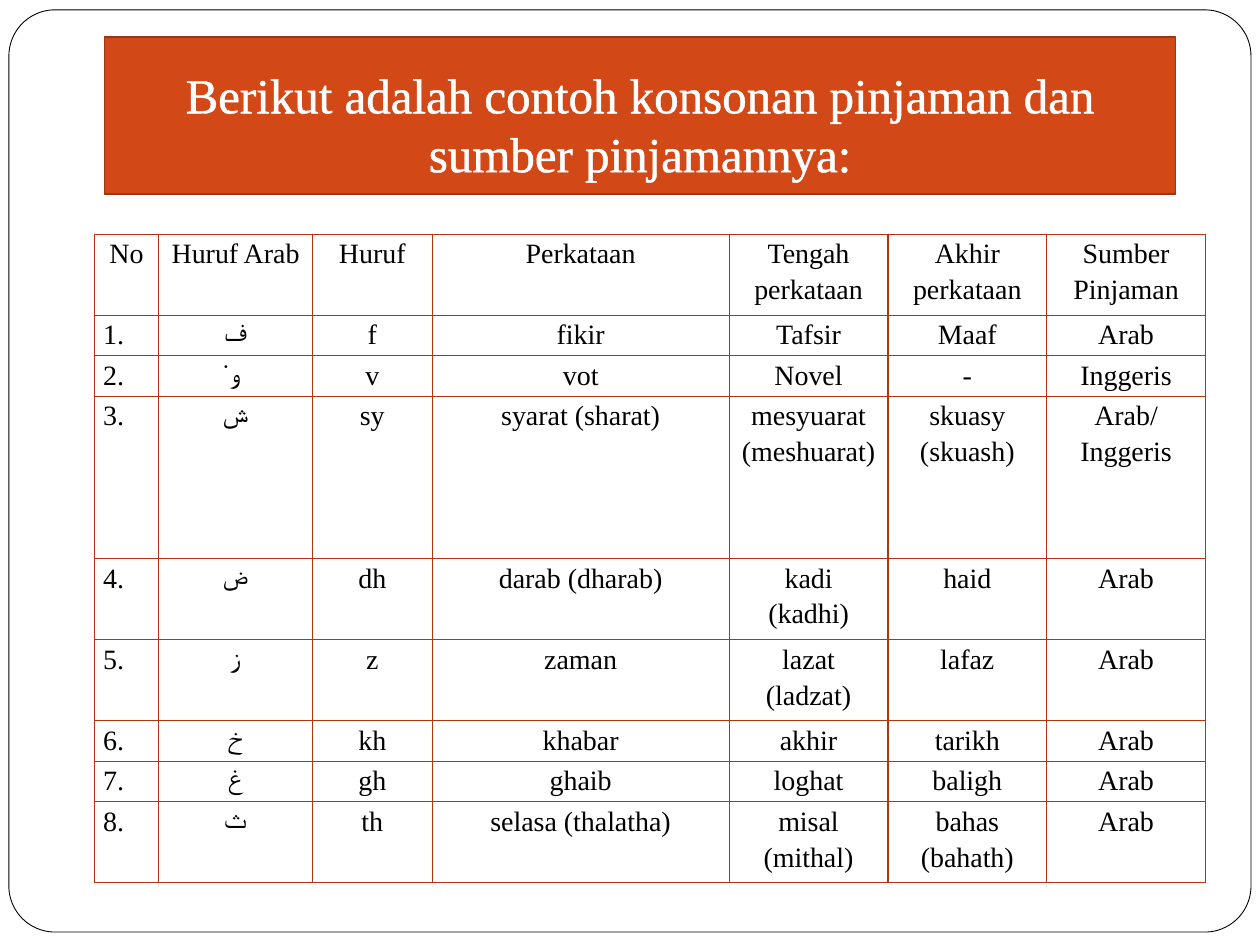
from lxml.etree import SubElement
from pptx import Presentation
from pptx.dml.color import RGBColor
from pptx.enum.shapes import MSO_SHAPE as Preset
from pptx.enum.text import MSO_ANCHOR as Anchor, PP_ALIGN as Align
from pptx.oxml.ns import qn
from pptx.util import Cm, Pt

FONT = "Times New Roman"
COLORS = {
    "paper": "FFFFFF",
    "ink": "000000",
    "banner": "D34817",
    "banner_edge": "9C3511",
    "grid": "B1360B",
}

TITLE = "Berikut adalah contoh konsonan pinjaman dan sumber pinjamannya:"
COLUMN_WIDTHS = [1.3, 3.1, 2.41, 5.99, 3.2, 3.2, 3.2]
ROW_LINES = [2, 1, 1, 4, 2, 2, 1, 1, 2]
TABLE_HEIGHT = 13.08
CONSONANTS = [
    ["No", "Huruf Arab", "Huruf", "Perkataan", "Tengah perkataan",
     "Akhir perkataan", "Sumber Pinjaman"],
    ["1.", "ف", "f", "fikir", "Tafsir", "Maaf", "Arab"],
    ["2.", "و̇", "v", "vot", "Novel", "-", "Inggeris"],
    ["3.", "ش", "sy", "syarat (sharat)", "mesyuarat (meshuarat)",
     "skuasy (skuash)", "Arab/ Inggeris"],
    ["4.", "ض", "dh", "darab (dharab)", "kadi\n(kadhi)", "haid", "Arab"],
    ["5.", "ز", "z", "zaman", "lazat (ladzat)", "lafaz", "Arab"],
    ["6.", "خ", "kh", "khabar", "akhir", "tarikh", "Arab"],
    ["7.", "غ", "gh", "ghaib", "loghat", "baligh", "Arab"],
    ["8.", "ث", "th", "selasa (thalatha)", "misal\n(mithal)",
     "bahas (bahath)", "Arab"],
]


def color(name):
    return RGBColor.from_string(COLORS[name])


def add_line(parent, tag, width, name):
    line = SubElement(parent, qn(tag), w=str(Pt(width)))
    fill = SubElement(line, qn("a:solidFill"))
    SubElement(fill, qn("a:srgbClr"), val=COLORS[name])
    return line


def add_span(para, text, size, name):
    span = para.add_run()
    span.text = text
    span.font.name = FONT
    span.font.size = Pt(size)
    span.font.color.rgb = color(name)
    return span


def add_box(page, preset, place, fill, edge, edge_width):
    box = page.shapes.add_shape(preset, *map(Cm, place))
    box.shadow.inherit = False
    box.fill.solid()
    box.fill.fore_color.rgb = color(fill)
    box.line.color.rgb = color(edge)
    box.line.width = Pt(edge_width)
    return box


def add_frame(page):
    frame = add_box(page, Preset.ROUNDED_RECTANGLE, (0.18, 0.2, 25.04, 18.59),
                    "paper", "ink", 0.5)
    frame.adjustments[0] = 0.05


def add_banner(page):
    banner = add_box(page, Preset.RECTANGLE, (2.11, 0.74, 21.59, 3.18),
                     "banner", "banner_edge", 1)
    text = banner.text_frame
    text.word_wrap = True
    text.vertical_anchor = Anchor.BOTTOM
    text.margin_left = text.margin_right = text.margin_bottom = Cm(0.25)
    text.margin_top = Cm(0.13)
    para = text.paragraphs[0]
    para.alignment = Align.CENTER
    span = add_span(para, TITLE, 28, "paper")
    properties = span.font._element
    properties.insert(0, add_line(properties, "a:ln", 1.45, "paper"))


def fill_cell(cell, text, alignment):
    cell.margin_left = cell.margin_right = Cm(0.18)
    cell.margin_top = cell.margin_bottom = 0
    frame = cell.text_frame
    for index, line in enumerate(text.split("\n")):
        para = frame.add_paragraph() if index else frame.paragraphs[0]
        para.alignment = alignment
        para.line_spacing = 1.15
        add_span(para, line, 16, "ink")
    properties = cell._tc.get_or_add_tcPr()
    for side in "LRTB":
        add_line(properties, f"a:ln{side}", 0.75, "grid")
    cell.fill.background()


def add_consonant_table(page):
    table = page.shapes.add_table(
        len(CONSONANTS), len(COLUMN_WIDTHS), Cm(1.9), Cm(4.72),
        Cm(sum(COLUMN_WIDTHS)), Cm(TABLE_HEIGHT)).table
    table.first_row = table.horz_banding = False
    for column, width in zip(table.columns, COLUMN_WIDTHS):
        column.width = Cm(width)
    for row, lines in zip(table.rows, ROW_LINES):
        row.height = Cm(TABLE_HEIGHT * lines / sum(ROW_LINES))
    for r, texts in enumerate(CONSONANTS):
        for c, text in enumerate(texts):
            is_number = r > 0 and c == 0
            fill_cell(table.cell(r, c), text,
                      Align.LEFT if is_number else Align.CENTER)


def main():
    deck = Presentation()
    deck.slide_width, deck.slide_height = Cm(25.4), Cm(19.05)
    page = deck.slides.add_slide(deck.slide_layouts[6])
    add_frame(page)
    add_banner(page)
    add_consonant_table(page)
    deck.save("out.pptx")


if __name__ == "__main__":
    main()
